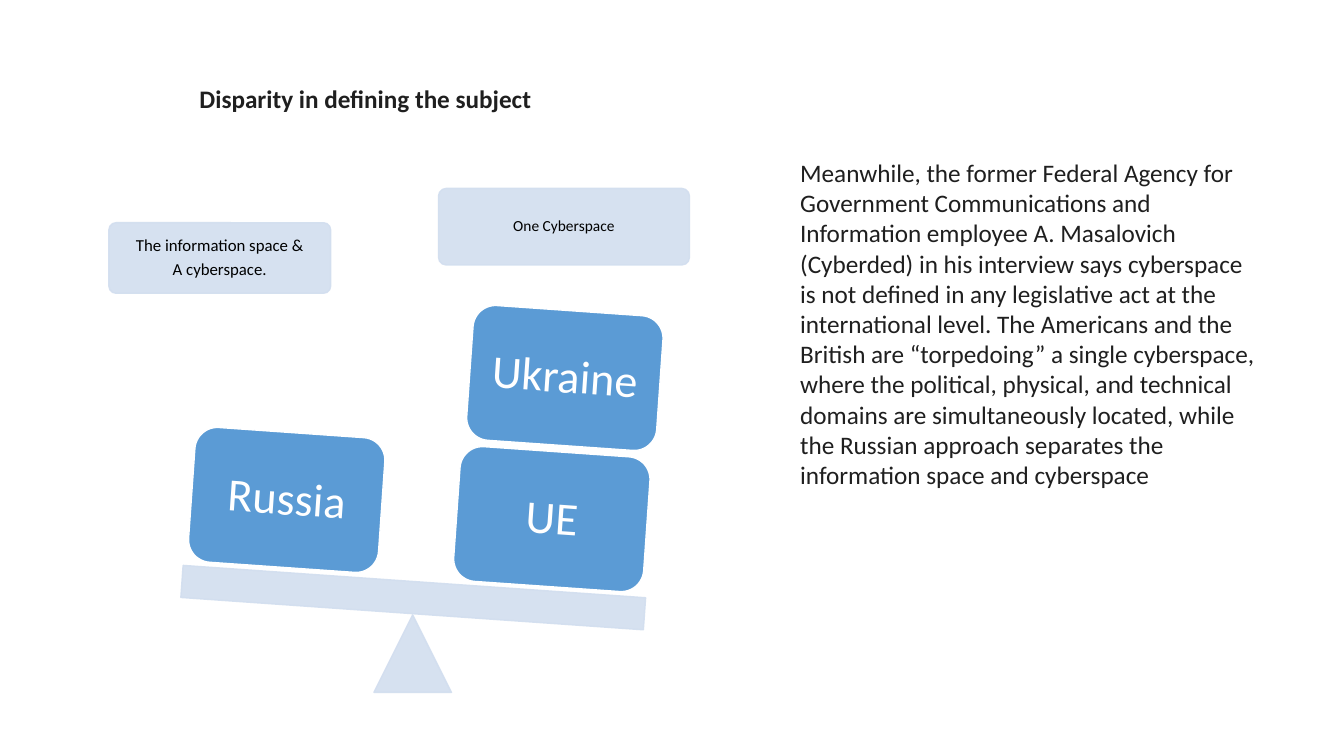
from dataclasses import dataclass

from lxml.etree import SubElement
from pptx import Presentation
from pptx.dml.color import RGBColor
from pptx.enum.shapes import MSO_SHAPE
from pptx.enum.text import MSO_ANCHOR, MSO_AUTO_SIZE, PP_ALIGN
from pptx.oxml.ns import qn
from pptx.shapes.autoshape import Shape
from pptx.slide import Slide
from pptx.text.text import TextFrame
from pptx.util import Pt


@dataclass(frozen=True)
class Theme:
    font: str = "Calibri"
    pale: RGBColor = RGBColor(0xD2, 0xDE, 0xEF)
    blue: RGBColor = RGBColor(0x5B, 0x9B, 0xD5)
    white: RGBColor = RGBColor(0xFF, 0xFF, 0xFF)
    black: RGBColor = RGBColor(0, 0, 0)
    ink: RGBColor = RGBColor(0x1F, 0x1F, 0x1F)
    body_size: float = 18
    weight_size: float = 33
    pale_opacity: int = 90


THEME = Theme()


@dataclass(frozen=True)
class Box:
    left: float
    top: float
    width: float
    height: float


@dataclass(frozen=True)
class Callout:
    box: Box
    text: str
    size: float


@dataclass(frozen=True)
class Weight:
    left: float
    top: float
    name: str


TILT = 4
WEIGHT_WIDTH, WEIGHT_HEIGHT = 136, 96.5
CALLOUTS = (
    Callout(Box(77.8, 159.1, 158.4, 50.4), "The information space &\nA cyberspace.", 12),
    Callout(Box(313.2, 134.6, 179.3, 54.7), "One Cyberspace", 11),
)
WEIGHTS = (
    Weight(326.2, 322.6, "UE"),
    Weight(335.5, 221.8, "Ukraine"),
    Weight(136.8, 308.9, "Russia"),
)
FULCRUM = Box(267.1, 439.2, 55.4, 55.4)
BEAM = Box(129.6, 415.4, 331.2, 23)
TITLE = Box(135.4, 56.2, 295.2, 28.8)
BODY = Box(564.5, 108.7, 342.7, 269.3)
BODY_TEXT = (
    "Meanwhile, the former Federal Agency for Government Communications and "
    "Information employee A. Masalovich (Cyberded) in his interview says "
    "cyberspace is not defined in any legislative act at the international level. "
    "The Americans and the British are “torpedoing” a single cyberspace, where the "
    "political, physical, and technical domains are simultaneously located, while "
    "the Russian approach separates the information space and cyberspace"
)


def style_runs(frame: TextFrame, size: float, color: RGBColor, bold: bool = False) -> None:
    for paragraph in frame.paragraphs:
        for run in paragraph.runs:
            run.font.name = THEME.font
            run.font.size = Pt(size)
            run.font.color.rgb = color
            run.font.bold = bold


def add_block(slide: Slide, kind: MSO_SHAPE, box: Box, fill: RGBColor, line: RGBColor) -> Shape:
    shape = slide.shapes.add_shape(
        kind, Pt(box.left), Pt(box.top), Pt(box.width), Pt(box.height)
    )
    shape.shadow.inherit = False
    shape.fill.solid()
    shape.fill.fore_color.rgb = fill
    shape.line.color.rgb = line
    shape.line.width = Pt(1)
    return shape


def add_pale_block(slide: Slide, kind: MSO_SHAPE, box: Box) -> Shape:
    """Add a block whose fill and outline are slightly transparent."""
    shape = add_block(slide, kind, box, THEME.pale, THEME.pale)
    for color in shape.element.spPr.iter(qn("a:srgbClr")):
        SubElement(color, qn("a:alpha"), val=str(THEME.pale_opacity * 1000))
    return shape


def set_label(shape: Shape, text: str, size: float, color: RGBColor, inset: float) -> None:
    frame = shape.text_frame
    frame.text = text
    frame.word_wrap = True
    frame.vertical_anchor = MSO_ANCHOR.MIDDLE
    frame.margin_left = frame.margin_right = Pt(inset)
    frame.margin_top = frame.margin_bottom = Pt(inset)
    for paragraph in frame.paragraphs:
        paragraph.alignment = PP_ALIGN.CENTER
        paragraph.line_spacing = 0.9
        paragraph.space_after = Pt(size * 0.35)
    style_runs(frame, size, color)


def add_callout(slide: Slide, callout: Callout) -> None:
    shape = add_pale_block(slide, MSO_SHAPE.ROUNDED_RECTANGLE, callout.box)
    shape.adjustments[0] = 0.1
    set_label(shape, callout.text, callout.size, THEME.black, 3.6)


def add_weight(slide: Slide, weight: Weight) -> None:
    box = Box(weight.left, weight.top, WEIGHT_WIDTH, WEIGHT_HEIGHT)
    shape = add_block(slide, MSO_SHAPE.ROUNDED_RECTANGLE, box, THEME.blue, THEME.white)
    shape.rotation = TILT
    set_label(shape, weight.name, THEME.weight_size, THEME.white, 10)


def add_text(slide: Slide, box: Box, text: str, bold: bool, wrap: bool) -> None:
    shape = slide.shapes.add_textbox(
        Pt(box.left), Pt(box.top), Pt(box.width), Pt(box.height)
    )
    frame = shape.text_frame
    frame.text = text
    frame.word_wrap = wrap
    frame.auto_size = MSO_AUTO_SIZE.SHAPE_TO_FIT_TEXT
    style_runs(frame, THEME.body_size, THEME.ink, bold)


def main() -> None:
    presentation = Presentation()
    presentation.slide_width, presentation.slide_height = Pt(960), Pt(540)
    slide = presentation.slides.add_slide(presentation.slide_layouts[6])

    for callout in CALLOUTS:
        add_callout(slide, callout)
    add_pale_block(slide, MSO_SHAPE.ISOSCELES_TRIANGLE, FULCRUM)
    beam = add_pale_block(slide, MSO_SHAPE.RECTANGLE, BEAM)
    beam.rotation = TILT
    for weight in WEIGHTS:
        add_weight(slide, weight)
    add_text(slide, TITLE, "Disparity in defining the subject", bold=True, wrap=False)
    add_text(slide, BODY, BODY_TEXT, bold=False, wrap=True)

    presentation.save("out.pptx")


if __name__ == "__main__":
    main()
